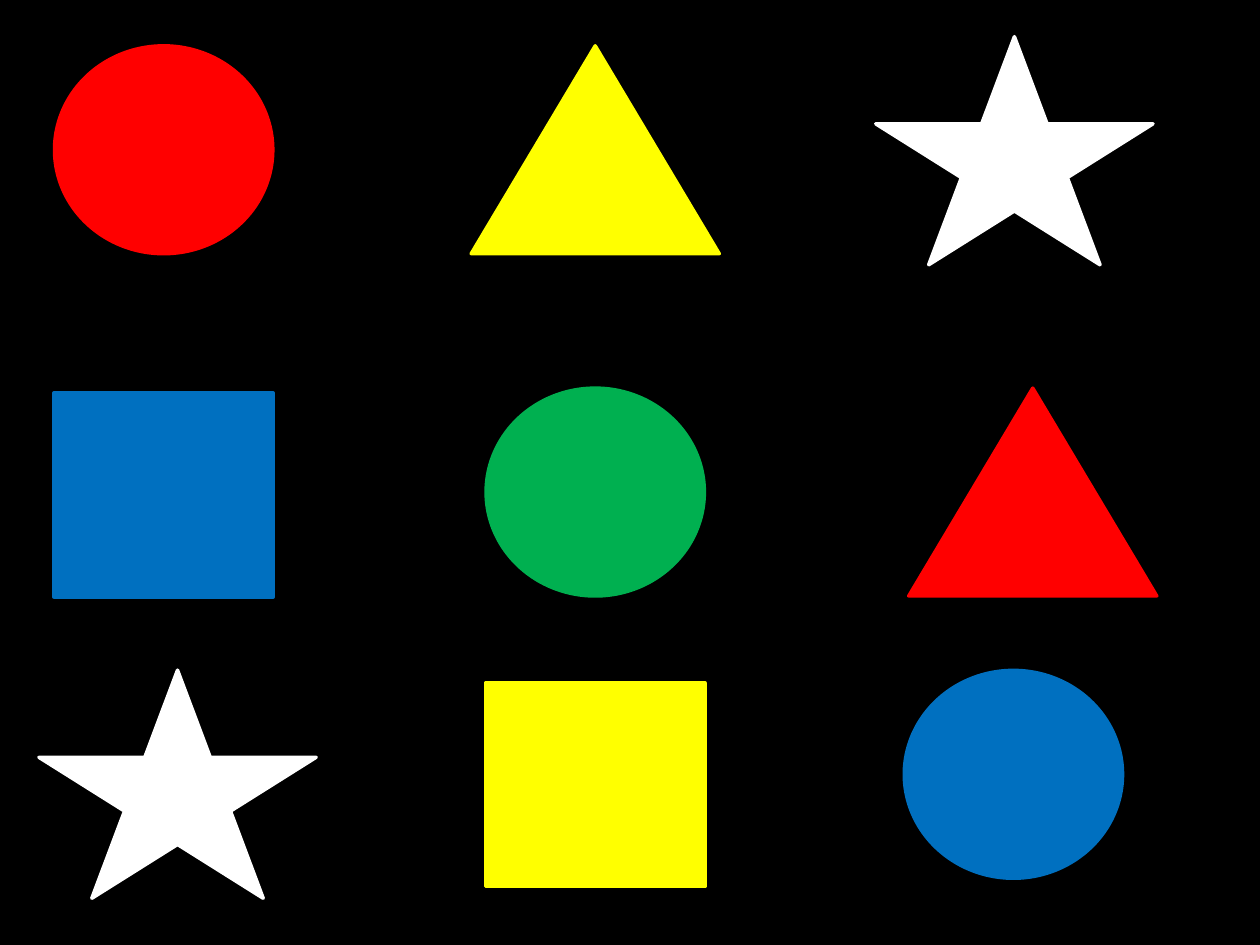
import pptx
import pptx.dml.color
import pptx.enum.shapes
import pptx.util

Cm = pptx.util.Cm
RGBColor = pptx.dml.color.RGBColor
Figure = pptx.enum.shapes.MSO_SHAPE

BLACK = RGBColor(0x00, 0x00, 0x00)
RED = RGBColor(0xFF, 0x00, 0x00)
YELLOW = RGBColor(0xFF, 0xFF, 0x00)
WHITE = RGBColor(0xFF, 0xFF, 0xFF)
BLUE = RGBColor(0x00, 0x70, 0xC0)
GREEN = RGBColor(0x00, 0xB0, 0x50)

CIRCLE = (Figure.OVAL, 4.4, 4.19)
TRIANGLE = (Figure.ISOSCELES_TRIANGLE, 5, 4.19)
STAR = (Figure.STAR_5_POINT, 5.59, 4.6)
SQUARE = (Figure.RECTANGLE, 4.42, 4.11)

FIGURE_ROWS = [
    ((0, 0.74), [(CIRCLE, RED, 3.3, 2.28), (TRIANGLE, YELLOW, 12, 2.28),
                 (STAR, WHITE, 20.45, 2.3)]),
    ((0, 7.82), [(SQUARE, BLUE, 3.3, 2.16), (CIRCLE, GREEN, 12, 2.1),
                 (TRIANGLE, RED, 20.82, 2.1)]),
    ((0, 13.51), [(STAR, WHITE, 3.58, 2.3), (SQUARE, YELLOW, 12, 2.31),
                  (CIRCLE, BLUE, 20.43, 2.1)]),
]


def paint(figure, colour):
    """Give a figure a solid fill and an outline of the same colour."""
    figure.fill.solid()
    figure.line.fill.solid()
    formats = {
        figure.fill.fore_color: {"rgb": colour},
        figure.line.fill.fore_color: {"rgb": colour},
        figure.line: {"width": pptx.util.Pt(2)},
        figure.shadow: {"inherit": False},
    }
    for part, values in formats.items():
        for attribute, value in values.items():
            setattr(part, attribute, value)


def add_figure_row(slide, box, figures):
    """Place figures by their centres, measured in cm from the box corner."""
    left, top = box
    for (outline, width, height), colour, centre_x, centre_y in figures:
        figure = slide.shapes.add_shape(
            outline,
            Cm(left + centre_x - width / 2),
            Cm(top + centre_y - height / 2),
            Cm(width),
            Cm(height),
        )
        paint(figure, colour)


def main():
    """Build the slide of coloured figures and save it."""
    deck = pptx.Presentation()
    deck.slide_width, deck.slide_height = Cm(25.4), Cm(19.05)
    slide = deck.slides.add_slide(deck.slide_layouts.get_by_name("Blank"))
    slide.background.fill.solid()
    slide.background.fill.fore_color.rgb = BLACK
    for box, figures in FIGURE_ROWS:
        add_figure_row(slide, box, figures)
    deck.save("out.pptx")


if __name__ == "__main__":
    main()
